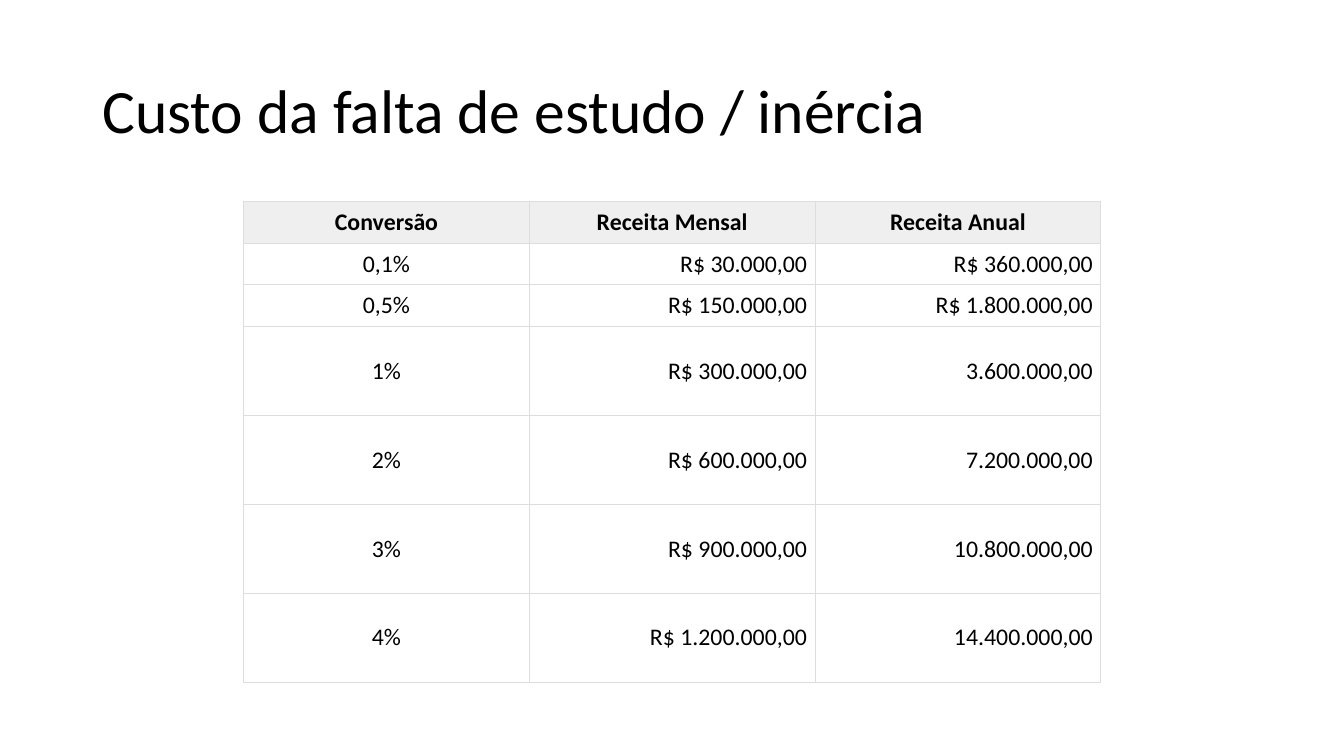
from lxml import etree
from pptx import Presentation
from pptx.dml.color import RGBColor
from pptx.enum.text import MSO_ANCHOR, PP_ALIGN
from pptx.oxml.ns import qn
from pptx.util import Cm, Pt

MIDDLE = MSO_ANCHOR.MIDDLE
LEFT = PP_ALIGN.LEFT
CENTER = PP_ALIGN.CENTER
RIGHT = PP_ALIGN.RIGHT

BLACK = RGBColor(0x00, 0x00, 0x00)
WHITE = RGBColor(0xFF, 0xFF, 0xFF)
HEADER_GRAY = RGBColor(0xEF, 0xEF, 0xEF)
BORDER_GRAY = RGBColor(0xDD, 0xDD, 0xDD)

FONT = "Calibri"
BORDER_WIDTH = Pt(0.75)
COLUMN_WIDTH = Cm(7.2)
SHORT_ROW = Cm(1.05)
TALL_ROW = Cm(2.24)
SHORT_ROW_COUNT = 3

REVENUE_ROWS = [
    ("Conversão", "Receita Mensal", "Receita Anual"),
    ("0,1%", "R$ 30.000,00", "R$ 360.000,00"),
    ("0,5%", "R$ 150.000,00", "R$ 1.800.000,00"),
    ("1%", "R$ 300.000,00", "3.600.000,00"),
    ("2%", "R$ 600.000,00", "7.200.000,00"),
    ("3%", "R$ 900.000,00", "10.800.000,00"),
    ("4%", "R$ 1.200.000,00", "14.400.000,00"),
]


def write_text(text_frame, text, size, alignment, bold=False):
    text_frame.text = text
    paragraph = text_frame.paragraphs[0]
    paragraph.alignment = alignment
    font = paragraph.runs[0].font
    font.name = FONT
    font.size = Pt(size)
    font.bold = bold
    font.color.rgb = BLACK


def add_title(slide, text):
    title = slide.shapes.add_textbox(Cm(2.33), Cm(1.01), Cm(29.21), Cm(3.68))
    text_frame = title.text_frame
    text_frame.word_wrap = True
    text_frame.vertical_anchor = MIDDLE
    write_text(text_frame, text, 44, LEFT)
    text_frame.paragraphs[0].line_spacing = 0.9


def add_borders(cell):
    properties = cell._tc.get_or_add_tcPr()
    for side in ("a:lnL", "a:lnR", "a:lnT", "a:lnB"):
        line = etree.SubElement(properties, qn(side), w=str(BORDER_WIDTH))
        fill = etree.SubElement(line, qn("a:solidFill"))
        etree.SubElement(fill, qn("a:srgbClr"), val=str(BORDER_GRAY))


def format_cell(cell, text, alignment, is_header):
    cell.margin_left = cell.margin_right = Cm(0.2)
    cell.margin_top = cell.margin_bottom = Cm(0.15)
    cell.vertical_anchor = MIDDLE
    write_text(cell.text_frame, text, 17, alignment, is_header)
    add_borders(cell)
    cell.fill.solid()
    cell.fill.fore_color.rgb = HEADER_GRAY if is_header else WHITE


def add_revenue_table(slide, rows):
    column_count = len(rows[0])
    tall_row_count = len(rows) - SHORT_ROW_COUNT
    height = SHORT_ROW * SHORT_ROW_COUNT + TALL_ROW * tall_row_count
    table = slide.shapes.add_table(
        len(rows), column_count, Cm(6.14), Cm(5.08),
        COLUMN_WIDTH * column_count, height,
    ).table
    for column in table.columns:
        column.width = COLUMN_WIDTH
    for row_index, texts in enumerate(rows):
        is_short = row_index < SHORT_ROW_COUNT
        table.rows[row_index].height = SHORT_ROW if is_short else TALL_ROW
        is_header = row_index == 0
        for column_index, text in enumerate(texts):
            alignment = CENTER if is_header or column_index == 0 else RIGHT
            cell = table.cell(row_index, column_index)
            format_cell(cell, text, alignment, is_header)


def main():
    presentation = Presentation()
    presentation.slide_width = Cm(33.87)
    presentation.slide_height = Cm(19.05)
    slide = presentation.slides.add_slide(presentation.slide_layouts[6])
    add_title(slide, "Custo da falta de estudo / inércia")
    add_revenue_table(slide, REVENUE_ROWS)
    presentation.save("out.pptx")


if __name__ == "__main__":
    main()
